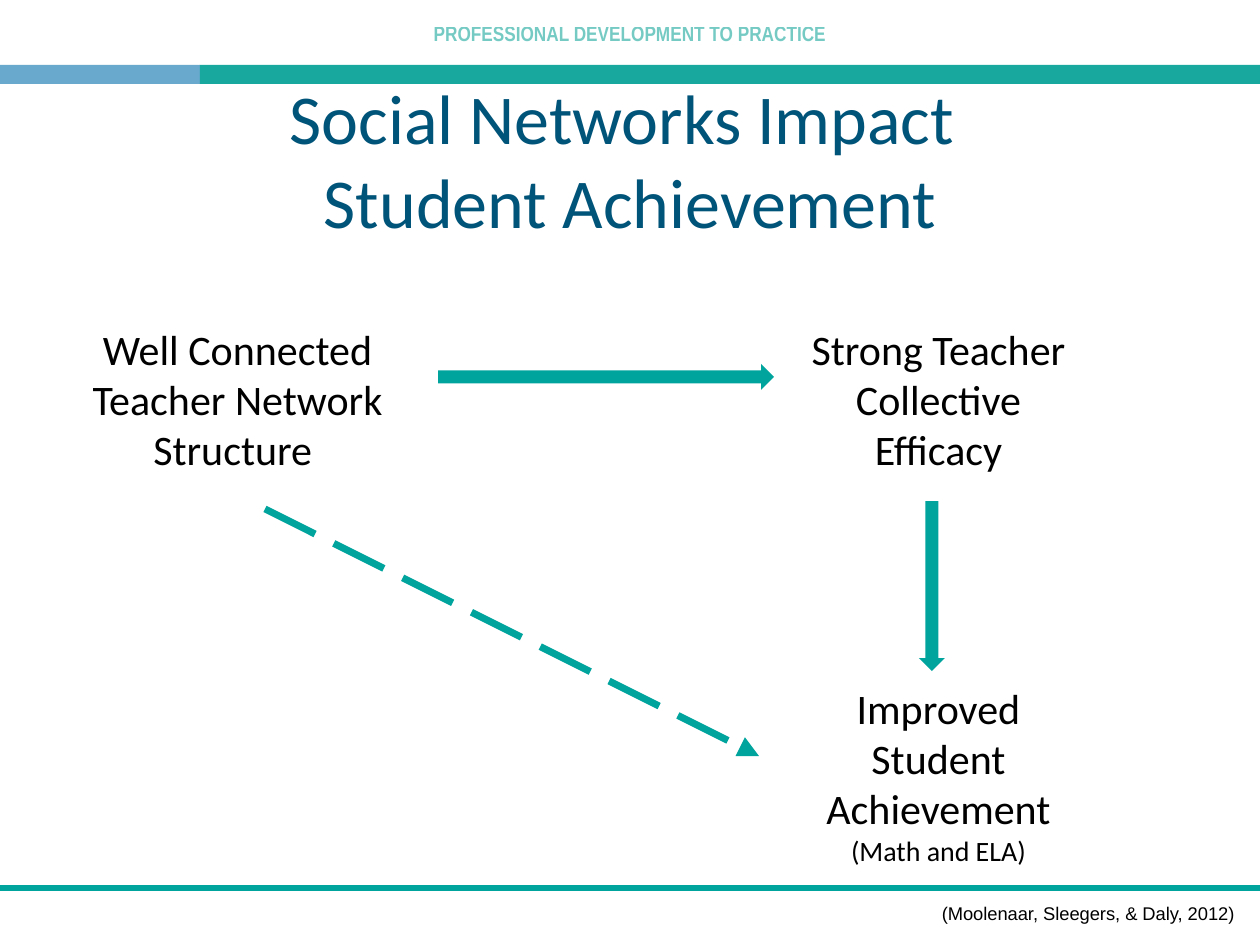
"""Build the slide on social networks and student achievement."""
from dataclasses import dataclass
from typing import Optional

import lxml.etree
import pptx
import pptx.dml.color
import pptx.enum.dml
import pptx.enum.shapes
import pptx.enum.text
import pptx.oxml.ns
import pptx.util

RGB = pptx.dml.color.RGBColor
ALIGN = pptx.enum.text.PP_ALIGN
SHAPE = pptx.enum.shapes.MSO_SHAPE
DASH = pptx.enum.dml.MSO_LINE

PX_PER_INCH = 126
SLIDE_WIDTH, SLIDE_HEIGHT = 1260, 945
GREEN = RGB(0x19, 0xA8, 0x9E)
TEAL = RGB(0x00, 0xA4, 0x9D)
BLUE = RGB(0x69, 0xA9, 0xCD)
NAVY = RGB(0x00, 0x54, 0x79)
BLACK = RGB(0, 0, 0)


@dataclass(frozen=True)
class Box:
    left: int
    top: int
    width: int
    height: int


@dataclass(frozen=True)
class Style:
    font: str
    size: float
    color: RGB
    bold: bool = False


@dataclass(frozen=True)
class Block:
    box: Box
    color: RGB
    kind: SHAPE = SHAPE.RECTANGLE


@dataclass(frozen=True)
class Rule:
    start: tuple[int, int]
    end: tuple[int, int]
    width: float
    dash: Optional[DASH] = None
    arrow: bool = False


@dataclass(frozen=True)
class Concept:
    left: int
    top: int
    text: str
    detail: str = ""


HEADING = Style("Calibri", 40, NAVY)
CONCEPT = Style("Calibri", 24, BLACK)
DETAIL = Style("Calibri", 16, BLACK)
BANNER = Style("Arial Narrow", 12, GREEN, bold=True)
CITATION = Style("Arial", 10.5, BLACK)

BLOCKS = (
    Block(Box(0, 65, 200, 19), BLUE),
    Block(Box(200, 65, 1060, 19), GREEN),
    Block(Box(438, 364, 336, 26), TEAL, SHAPE.RIGHT_ARROW),
    Block(Box(919, 501, 26, 170), TEAL, SHAPE.DOWN_ARROW),
)
RULES = (
    Rule((0, 888), (SLIDE_WIDTH, 888), 3),
    Rule((265, 509), (759, 756), 4, DASH.LONG_DASH, arrow=True),
)
CONCEPTS = (
    Concept(63, 310, "Well Connected Teacher Network Structure "),
    Concept(764, 310, "Strong Teacher Collective Efficacy"),
    Concept(764, 669, "Improved Student Achievement", "(Math and ELA)"),
)


def px(length: int) -> int:
    """Turn pixels into EMU."""
    return round(length * pptx.util.Inches(1) / PX_PER_INCH)


def place(box: Box) -> tuple[int, int, int, int]:
    """Give the EMU position and size of a box."""
    return px(box.left), px(box.top), px(box.width), px(box.height)


def add_run(paragraph, text: str, style: Style):
    """Add one styled run."""
    run = paragraph.add_run()
    run.text = text
    run.font.name = style.font
    run.font.size = pptx.util.Pt(style.size)
    run.font.bold = style.bold
    run.font.color.rgb = style.color
    return run


def add_paragraph_box(slide, box: Box, align: ALIGN, inset_x: int, inset_y: int):
    """Add a wrapping text box and return its first paragraph."""
    frame = slide.shapes.add_textbox(*place(box)).text_frame
    frame.word_wrap = True
    frame.margin_left = frame.margin_right = px(inset_x)
    frame.margin_top = frame.margin_bottom = px(inset_y)
    paragraph = frame.paragraphs[0]
    paragraph.alignment = align
    return paragraph


def add_banner(slide) -> None:
    """Add the translucent banner text."""
    paragraph = add_paragraph_box(slide, Box(0, 16, SLIDE_WIDTH, 50), ALIGN.CENTER, 9, 5)
    run = add_run(paragraph, "PROFESSIONAL DEVELOPMENT TO PRACTICE", BANNER)
    tint = run.font.fill._xPr.find(".//" + pptx.oxml.ns.qn("a:srgbClr"))
    lxml.etree.SubElement(tint, pptx.oxml.ns.qn("a:alpha"), val="60000")


def add_block(slide, block: Block) -> None:
    """Add a filled bar or block arrow."""
    shape = slide.shapes.add_shape(block.kind, *place(block.box))
    shape.shadow.inherit = False
    shape.fill.solid()
    shape.fill.fore_color.rgb = block.color
    shape.line.fill.background()


def add_rule(slide, rule: Rule) -> None:
    """Add a straight line, dashed or arrowed as its rule says."""
    connector = slide.shapes.add_connector(
        pptx.enum.shapes.MSO_CONNECTOR.STRAIGHT, *map(px, rule.start + rule.end))
    connector.line.color.rgb = TEAL
    connector.line.width = pptx.util.Pt(rule.width)
    if rule.dash is not None:
        connector.line.dash_style = rule.dash
    properties = connector._element.spPr
    if rule.arrow:
        outline = properties.find(pptx.oxml.ns.qn("a:ln"))
        lxml.etree.SubElement(outline, pptx.oxml.ns.qn("a:tailEnd"), type="triangle")
    lxml.etree.SubElement(properties, pptx.oxml.ns.qn("a:effectLst"))


def add_title(slide) -> None:
    """Fill and place the title placeholder."""
    title = slide.shapes.title
    title.left, title.top, title.width, title.height = place(Box(63, 83, 1134, 151))
    frame = title.text_frame
    frame.auto_size = pptx.enum.text.MSO_AUTO_SIZE.NONE
    frame.vertical_anchor = pptx.enum.text.MSO_ANCHOR.MIDDLE
    paragraph = frame.paragraphs[0]
    paragraph.alignment = ALIGN.CENTER
    add_run(paragraph, "Social Networks Impact ", HEADING)
    paragraph.add_line_break()
    add_run(paragraph, "Student Achievement", HEADING)


def add_concept(slide, concept: Concept) -> None:
    """Add one concept with its optional detail line."""
    box = Box(concept.left, concept.top, 336, 193)
    paragraph = add_paragraph_box(slide, box, ALIGN.CENTER, 13, 13)
    paragraph._p.get_or_add_pPr().set("marL", str(px(13)))
    add_run(paragraph, concept.text, CONCEPT)
    if concept.detail:
        paragraph.add_line_break()
        add_run(paragraph, concept.detail, DETAIL)


def main() -> None:
    """Build and save the presentation."""
    presentation = pptx.Presentation()
    presentation.slide_width = px(SLIDE_WIDTH)
    presentation.slide_height = px(SLIDE_HEIGHT)
    slide = presentation.slides.add_slide(presentation.slide_layouts[5])
    add_banner(slide)
    add_title(slide)
    for block in BLOCKS:
        add_block(slide, block)
    for rule in RULES:
        add_rule(slide, rule)
    for concept in CONCEPTS:
        add_concept(slide, concept)
    citation = add_paragraph_box(slide, Box(871, 896, 377, 35), ALIGN.RIGHT, 13, 6)
    add_run(citation, "(Moolenaar, Sleegers, & Daly, 2012)", CITATION)
    presentation.save("out.pptx")


if __name__ == "__main__":
    main()
